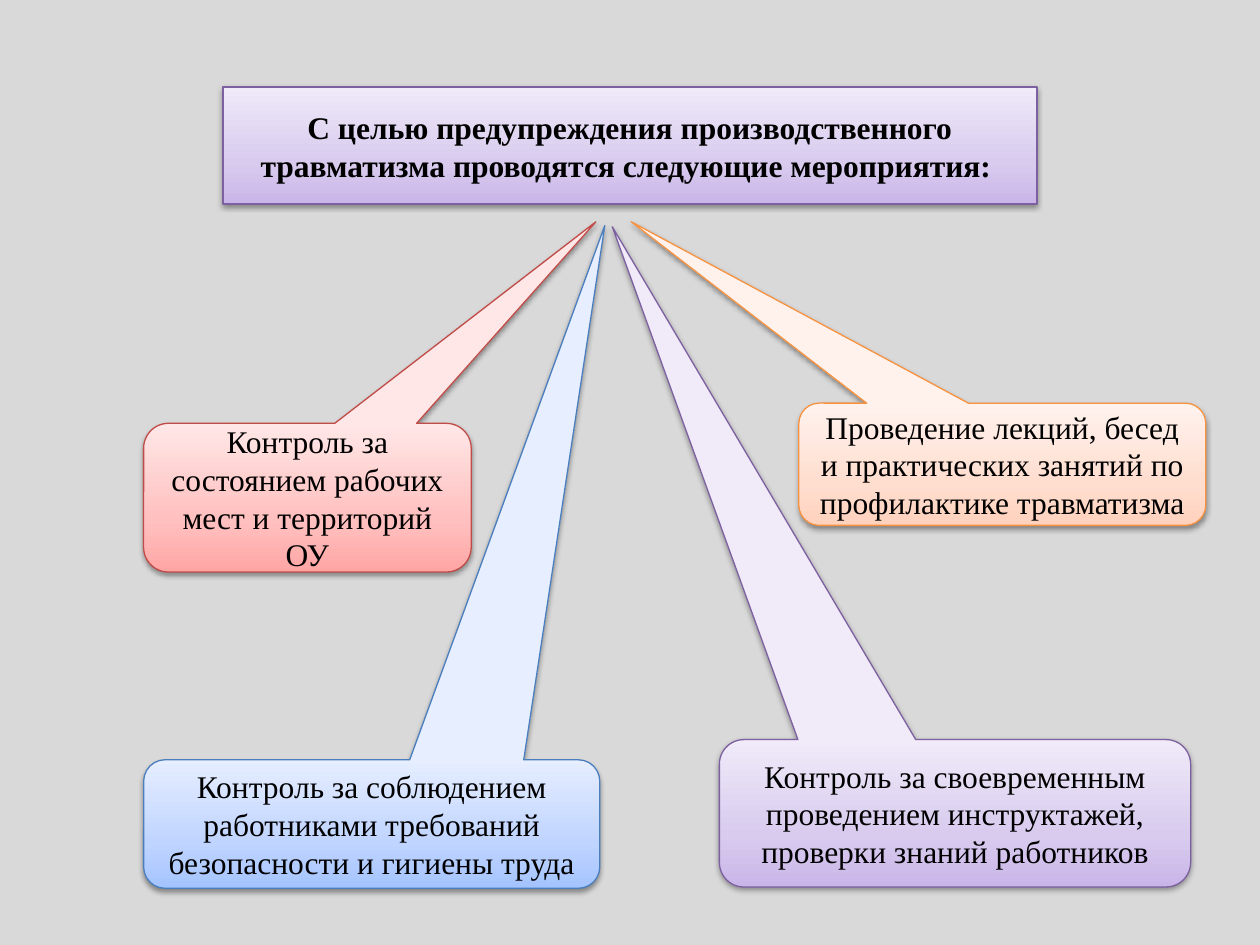
from copy import deepcopy

from lxml import etree
from pptx import Presentation
from pptx.dml.color import RGBColor
from pptx.enum import shapes, text
from pptx.oxml import ns
from pptx.util import Inches, Pt

COLORS = {"background": "D9D9D9", "text": "000000", "shadow": "000000"}
THEMES = {
    "purple": {"line": "7D60A0", "stops": ("C9B5E8", "D8CBEE", "F0EAF9")},
    "red": {"line": "BF4C48", "stops": ("FFA6A5", "FFC0BF", "FFE7E7")},
    "orange": {"line": "F69240", "stops": ("FFD2BD", "FFDED0", "FFF2ED")},
    "blue": {"line": "4B7EBC", "stops": ("A4C4FF", "BFD4FF", "E6EEFF")},
}
STOP_POSITIONS = (0, 0.35, 1)

HEADING = "С целью предупреждения производственного травматизма проводятся следующие мероприятия: "
MEASURES = [
    ("Контроль за состоянием рабочих мест и территорий ОУ",
     "red", (1.14, 3.36, 2.6, 1.18), (4.73, 1.76)),
    ("Проведение лекций, бесед и практических занятий по профилактике травматизма",
     "orange", (6.34, 3.2, 3.23, 0.97), (5.01, 1.76)),
    ("Контроль за соблюдением работниками требований безопасности и гигиены труда",
     "blue", (1.14, 6.03, 3.62, 1.02), (4.8, 1.79)),
    ("Контроль за своевременным проведением инструктажей, проверки знаний работников",
     "purple", (5.71, 5.87, 3.74, 1.17), (4.86, 1.8)),
]


def fill_gradient(panel, stop_colors):
    """Fill a panel with a three-stop gradient, darkest at the bottom."""
    panel.fill.gradient()
    panel.fill.gradient_angle = 90
    stop_list = panel._element.spPr.find(".//" + ns.qn("a:gsLst"))
    stop_list.append(deepcopy(stop_list[-1]))
    for stop, color, position in zip(panel.fill.gradient_stops, stop_colors, STOP_POSITIONS):
        stop.color.rgb = RGBColor.from_string(color)
        stop.position = position


def add_shadow(panel):
    """Give a panel a soft shadow falling straight down."""
    panel.shadow.inherit = False
    effects = panel._element.spPr.find(ns.qn("a:effectLst"))
    shadow = etree.SubElement(effects, ns.qn("a:outerShdw"), blurRad=str(Pt(3.1)),
                              dist=str(Pt(1.6)), dir="5400000", rotWithShape="0")
    color = etree.SubElement(shadow, ns.qn("a:srgbClr"), val=COLORS["shadow"])
    etree.SubElement(color, ns.qn("a:alpha"), val="38000")


def style_panel(panel, theme, wording, bold=False):
    """Apply a colour theme to a panel and write its centred text."""
    fill_gradient(panel, theme["stops"])
    panel.line.color.rgb = RGBColor.from_string(theme["line"])
    panel.line.width = Pt(0.75)
    add_shadow(panel)
    frame = panel.text_frame
    frame.text = wording
    frame.word_wrap = True
    frame.auto_size = text.MSO_AUTO_SIZE.NONE
    frame.vertical_anchor = text.MSO_ANCHOR.MIDDLE
    paragraph = frame.paragraphs[0]
    paragraph.alignment = text.PP_ALIGN.CENTER
    font = paragraph.font
    font.name, font.size, font.bold = "Times New Roman", Pt(18), bold
    font.color.rgb = RGBColor.from_string(COLORS["text"])


def place_heading(slide, box):
    """Move the title placeholder into the box and format it as a panel."""
    heading = slide.shapes.title
    heading.left, heading.top, heading.width, heading.height = map(Inches, box)
    style_panel(heading, THEMES["purple"], HEADING, bold=True)


def add_measure(slide, box, tip, theme, wording):
    """Add a rounded callout in the box whose pointer ends at the tip."""
    left, top, width, height = box
    callout = slide.shapes.add_shape(
        shapes.MSO_SHAPE.ROUNDED_RECTANGULAR_CALLOUT, *map(Inches, box))
    callout.adjustments[0] = (tip[0] - left) / width - 0.5
    callout.adjustments[1] = (tip[1] - top) / height - 0.5
    style_panel(callout, theme, wording)


def main():
    """Build the slide on injury prevention measures."""
    deck = Presentation()
    deck.slide_width, deck.slide_height = Inches(10), Inches(7.5)
    slide = deck.slides.add_slide(deck.slide_layouts.get_by_name("Title Only"))
    slide.background.fill.solid()
    slide.background.fill.fore_color.rgb = RGBColor.from_string(COLORS["background"])
    place_heading(slide, (1.77, 0.69, 6.46, 0.93))
    for wording, theme, box, tip in MEASURES:
        add_measure(slide, box, tip, THEMES[theme], wording)
    deck.save("out.pptx")


if __name__ == "__main__":
    main()
